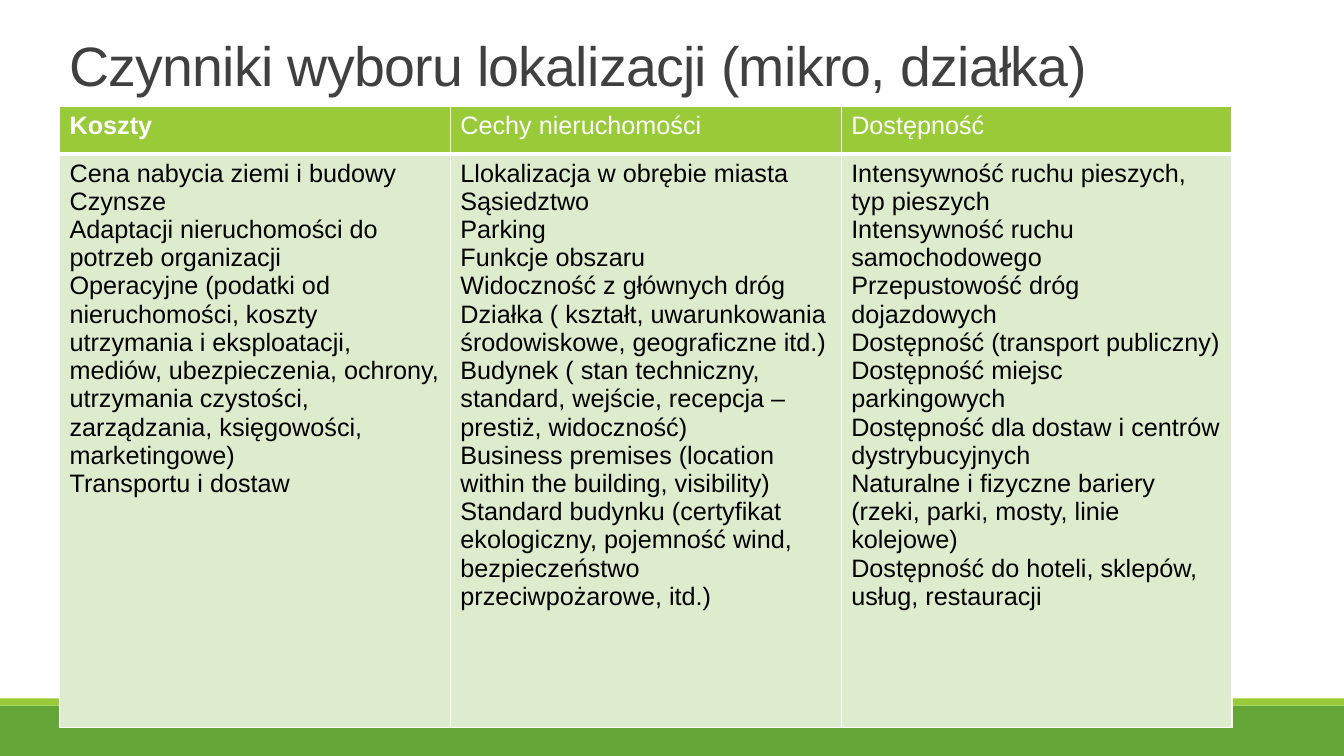
from lxml.etree import SubElement
from pptx import Presentation
from pptx.dml.color import RGBColor
from pptx.enum.shapes import MSO_SHAPE
from pptx.enum.text import MSO_ANCHOR
from pptx.oxml.ns import qn
from pptx.util import Pt

PX = 9144
COLORS = {"green": "63A537", "lime": "99CB38", "pale": "DEECCE",
          "white": "FFFFFF", "black": "000000", "grey": "404040"}
COLUMNS = {
    "Koszty": [
        "Cena nabycia ziemi i budowy",
        "Czynsze",
        "Adaptacji nieruchomości do potrzeb organizacji",
        "Operacyjne (podatki od nieruchomości, koszty utrzymania i eksploatacji, "
        "mediów, ubezpieczenia, ochrony, utrzymania czystości, zarządzania, "
        "księgowości, marketingowe)",
        "Transportu i dostaw",
    ],
    "Cechy nieruchomości": [
        "Llokalizacja w obrębie miasta Sąsiedztwo",
        "Parking",
        "Funkcje obszaru",
        "Widoczność z głównych dróg",
        "Działka ( kształt, uwarunkowania środowiskowe, geograficzne itd.)",
        "Budynek ( stan techniczny, standard, wejście, recepcja – prestiż, widoczność)",
        "Business premises (location",
        "within the building, visibility)",
        "Standard budynku (certyfikat ekologiczny, pojemność wind, "
        "bezpieczeństwo przeciwpożarowe, itd.)",
    ],
    "Dostępność": [
        "Intensywność ruchu pieszych, typ pieszych",
        "Intensywność ruchu samochodowego",
        "Przepustowość dróg dojazdowych",
        "Dostępność (transport publiczny)",
        "Dostępność miejsc parkingowych",
        "Dostępność dla dostaw i centrów dystrybucyjnych",
        "Naturalne i fizyczne bariery (rzeki, parki, mosty, linie kolejowe)",
        "Dostępność do hoteli, sklepów, usług, restauracji",
    ],
}


def scale(*sizes):
    """Turn px lengths into EMU."""
    return [size * PX for size in sizes]


def tint(name):
    """Look up a named colour."""
    return RGBColor.from_string(COLORS[name])


def write(frame, lines, size=18, color="black", bold=False, gap=None, track=0):
    """Fill a text frame with one paragraph per line."""
    frame.word_wrap = True
    for i, line in enumerate(lines):
        para = frame.paragraphs[0] if i == 0 else frame.add_paragraph()
        para.line_spacing = gap
        run = para.add_run()
        run.text = line
        run.font.name = "Arial"
        run.font.size = Pt(size)
        run.font.bold = bold
        run.font.color.rgb = tint(color)
        if track:
            run.font._element.set("spc", str(track))


def edge(cell, **widths):
    """Draw white cell borders with the given point widths."""
    props = cell._tc.get_or_add_tcPr()
    for side, width in widths.items():
        line = SubElement(props, qn(f"a:ln{side}"), w=str(Pt(width)))
        fill = SubElement(line, qn("a:solidFill"))
        SubElement(fill, qn("a:srgbClr"), val=COLORS["white"])


def band(slide, box, color):
    """Draw one plain footer band."""
    shape = slide.shapes.add_shape(MSO_SHAPE.RECTANGLE, *scale(*box))
    shape.shadow.inherit = False
    shape.fill.solid()
    shape.fill.fore_color.rgb = tint(color)
    shape.line.fill.background()


def footer(slide, x, y, w, h):
    """Stack a thin lime band on the green one."""
    thin = 7
    band(slide, (x, y + thin, w, h - thin), "green")
    band(slide, (x, y, w, thin), "lime")


def title(slide, x, y, w, h):
    """Place the slide title."""
    frame = slide.shapes.add_textbox(*scale(x, y, w, h)).text_frame
    frame.vertical_anchor = MSO_ANCHOR.MIDDLE
    write(frame, ["Czynniki wyboru lokalizacji (mikro, działka)"],
          size=39.6, color="grey", gap=0.85, track=-50)


def factors(slide, x, y, w, h):
    """Build the table of location factors."""
    head = 47
    count = len(COLUMNS)
    table = slide.shapes.add_table(2, count, *scale(x, y, w, h)).table
    table.rows[0].height, table.rows[1].height = scale(head, h - head)
    for col, (name, items) in enumerate(COLUMNS.items()):
        table.columns[col].width = w * PX // count
        top, body = table.cell(0, col), table.cell(1, col)
        edge(top, L=1, R=1, T=1, B=3)
        edge(body, L=1, R=1, T=3, B=1)
        for cell, color in ((top, "lime"), (body, "pale")):
            cell.fill.solid()
            cell.fill.fore_color.rgb = tint(color)
        write(top.text_frame, [name], color="white", bold=col == 0)
        write(body.text_frame, items)


def main():
    """Build and save the slide."""
    deck = Presentation()
    deck.slide_width, deck.slide_height = scale(1333, 750)
    slide = deck.slides.add_slide(deck.slide_layouts[6])
    footer(slide, 0, 693, 1333, 57)
    title(slide, 59, 18, 1100, 103)
    factors(slide, 59, 106, 1163, 616)
    deck.save("out.pptx")


if __name__ == "__main__":
    main()
